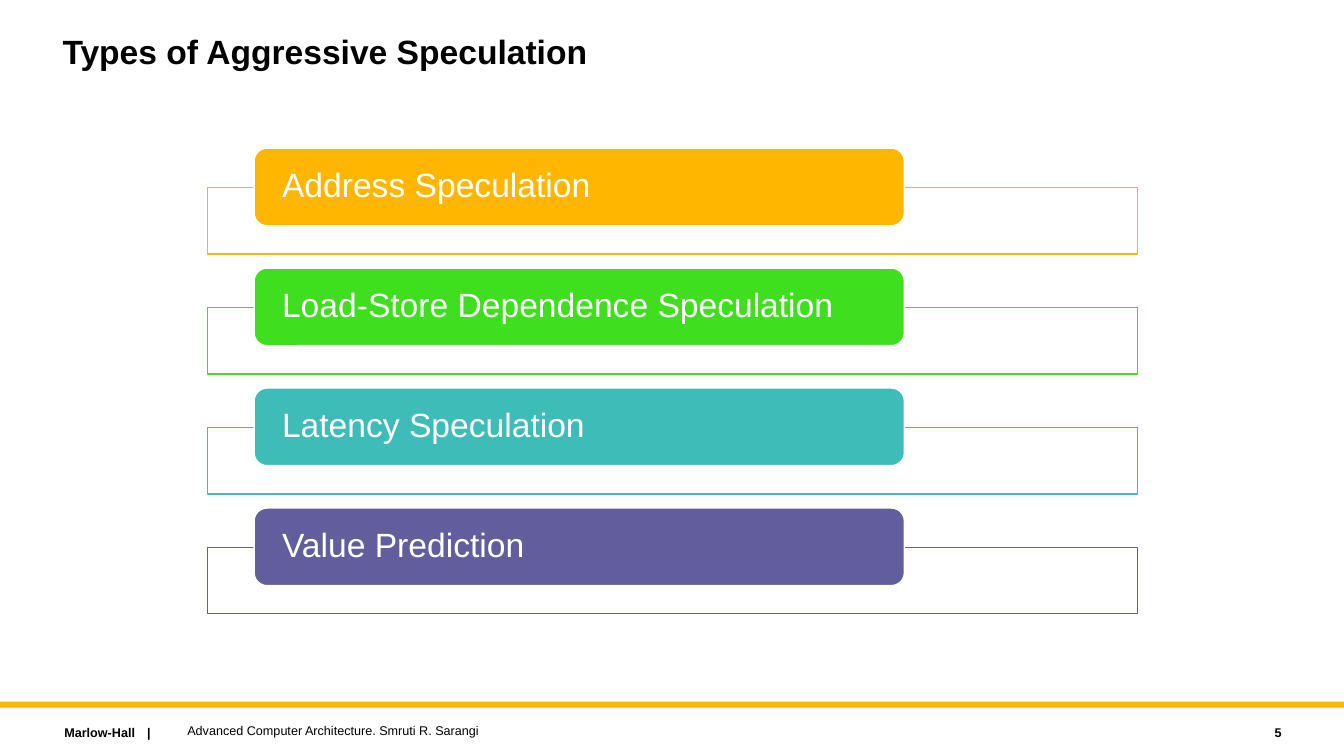
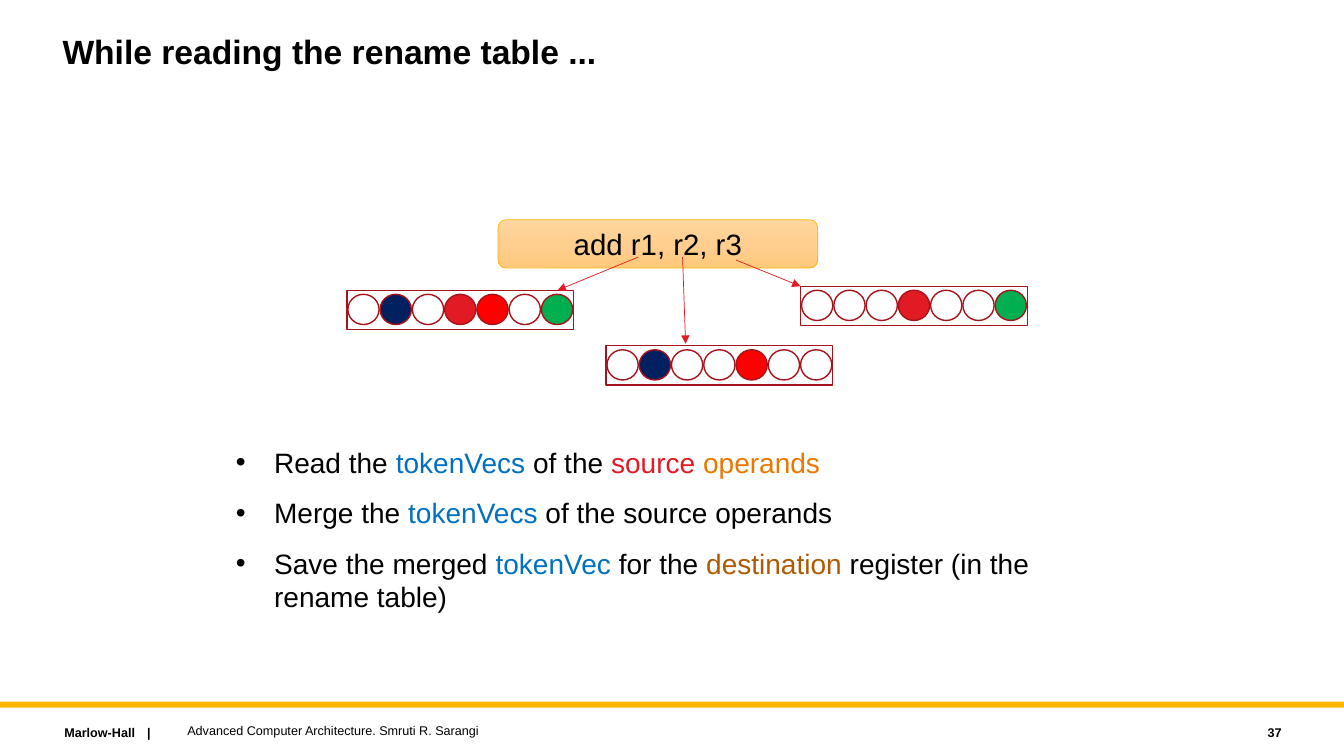
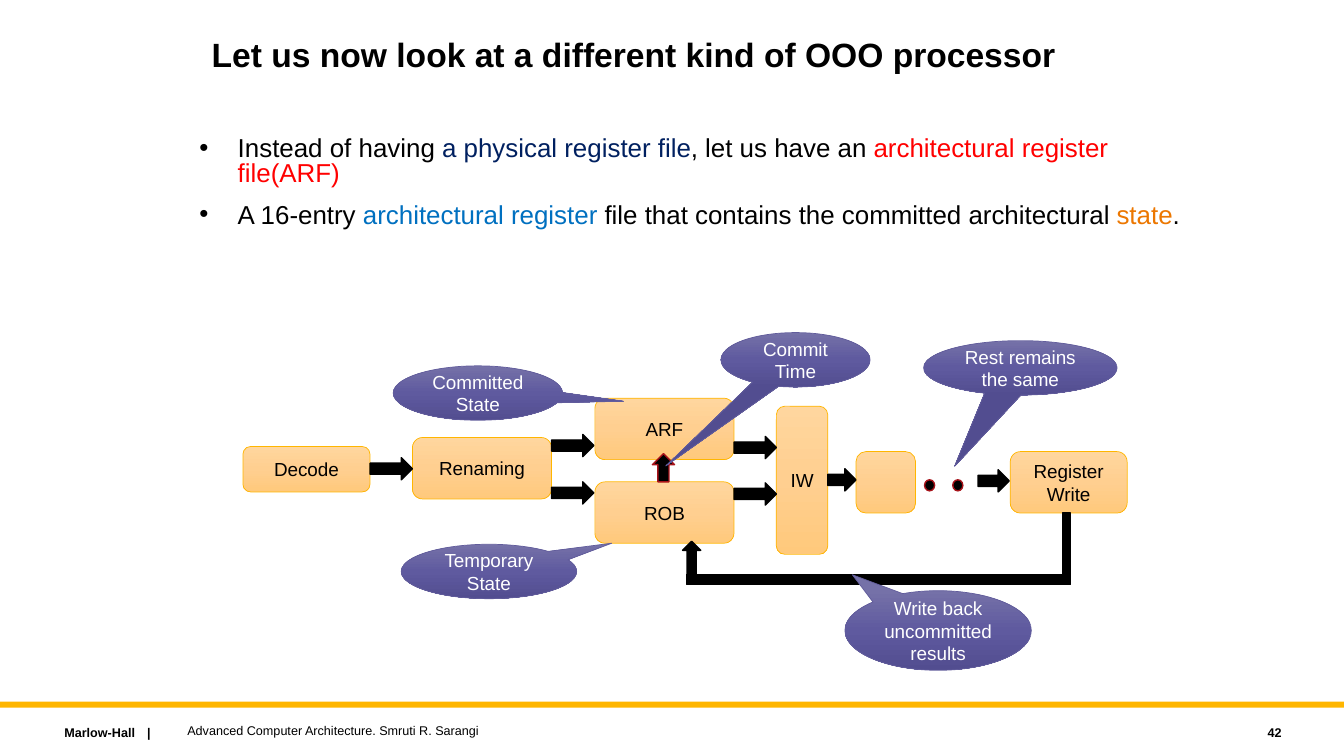
from copy import deepcopy
from dataclasses import dataclass

from lxml.etree import SubElement
from pptx import Presentation
from pptx.dml.color import RGBColor
from pptx.enum.shapes import MSO_CONNECTOR as Connector, MSO_SHAPE as Preset
from pptx.enum.text import MSO_ANCHOR as Anchor, MSO_AUTO_SIZE as AutoSize, PP_ALIGN as Align
from pptx.oxml.ns import qn
from pptx.util import Inches, Pt


@dataclass(frozen=True)
class Theme:
    font: str = "Arial"
    black: str = "000000"
    white: str = "FFFFFF"
    gold: str = "FFB600"
    lime: str = "3FDE1F"
    teal: str = "3EBCB7"
    violet: str = "625D9C"
    crimson: str = "E21A23"
    maroon: str = "A7131A"
    red: str = "FF0000"
    navy: str = "002060"
    blue: str = "0070C0"
    green: str = "00B050"
    orange: str = "EC7700"
    brown: str = "B15900"
    stage_shades: tuple = ("FFD69E", "FFCF90", "FFC97C")
    callout_shades: tuple = ("7571A8", "5F5A9F", "524D90")
    title_size: float = 24
    instruction_size: float = 21
    diagram_size: float = 13.5
    footer_size: float = 9


THEME = Theme()


def rgb(value):
    return RGBColor.from_string(value)


def inches(*lengths):
    return [Inches(length) for length in lengths]


def style_font(font, size, color, bold=False):
    font.name, font.size, font.bold = THEME.font, Pt(size), bold
    font.color.rgb = rgb(color)


def write(frame, text, size, color, bold=False, align=Align.LEFT, spacing=1.0):
    frame.text = text
    frame.word_wrap = True
    frame.vertical_anchor = Anchor.MIDDLE
    for paragraph in frame.paragraphs:
        paragraph.alignment = align
        paragraph.line_spacing = spacing
        for run in paragraph.runs:
            style_font(run.font, size, color, bold)


def add_figure(slide, preset, box, fill=None, line=None, width=1):
    figure = slide.shapes.add_shape(preset, *inches(*box))
    figure.shadow.inherit = False
    if fill:
        figure.fill.solid()
        figure.fill.fore_color.rgb = rgb(fill)
    else:
        figure.fill.background()
    if line:
        figure.line.color.rgb = rgb(line)
        figure.line.width = Pt(width)
    else:
        figure.line.fill.background()
    return figure


def shade(figure, colors):
    figure.fill.gradient()
    figure.fill.gradient_angle = 270
    stop_list = figure.element.spPr.find(".//" + qn("a:gsLst"))
    stop_list.insert(1, deepcopy(stop_list[0]))
    for index, (stop, color) in enumerate(zip(figure.fill.gradient_stops, colors)):
        stop.position = index / 2
        stop.color.rgb = rgb(color)


def add_stage(slide, box, text="", size=THEME.diagram_size):
    stage = add_figure(slide, Preset.ROUNDED_RECTANGLE, box, line=THEME.gold, width=0.5)
    shade(stage, THEME.stage_shades)
    if text:
        write(stage.text_frame, text, size, THEME.black, align=Align.CENTER)


def add_callout(slide, box, tip, text):
    callout = add_figure(slide, Preset.OVAL_CALLOUT, box, line=THEME.violet, width=0.5)
    callout.adjustments[0], callout.adjustments[1] = tip
    shade(callout, THEME.callout_shades)
    write(callout.text_frame, text, THEME.diagram_size, THEME.white, align=Align.CENTER)


def add_label(slide, box, text, bold=False, align=Align.LEFT):
    label = slide.shapes.add_textbox(*inches(*box))
    write(label.text_frame, text, THEME.footer_size, THEME.black, bold, align)
    return label


def add_arrow(slide, start, end):
    arrow = slide.shapes.add_connector(Connector.STRAIGHT, *inches(*start, *end))
    arrow.line.color.rgb = rgb(THEME.crimson)
    arrow.line.width = Pt(0.5)
    properties = arrow.element.spPr
    SubElement(properties.find(qn("a:ln")), qn("a:tailEnd"), type="triangle")
    SubElement(properties, qn("a:effectLst"))


def add_bullets(slide, box, items, size, spacing=1.0):
    frame = slide.shapes.add_textbox(*inches(*box)).text_frame
    frame.word_wrap = True
    for index, pieces in enumerate(items):
        paragraph = frame.add_paragraph() if index else frame.paragraphs[0]
        properties = paragraph._p.get_or_add_pPr()
        properties.set("marL", str(Inches(0.38)))
        properties.set("indent", str(Inches(-0.38)))
        SubElement(properties, qn("a:buFont"), typeface=THEME.font)
        SubElement(properties, qn("a:buChar"), char="•")
        paragraph.line_spacing = spacing
        if index:
            paragraph.space_before = Pt(12)
        for text, color in pieces:
            run = paragraph.add_run()
            run.text = text
            style_font(run.font, size, color)


def add_token_vector(slide, left, top, tokens):
    add_figure(slide, Preset.RECTANGLE, (left, top, 2.25, 0.39), line=THEME.maroon)
    for index in range(7):
        box = (left + 0.01 + 0.32 * index, top + 0.04, 0.31, 0.3)
        add_figure(slide, Preset.OVAL, box, tokens.get(index), THEME.maroon)


def brand_layout(layout, slide):
    for placeholder in list(layout.placeholders):
        if placeholder.placeholder_format.idx:
            layout.shapes.element.remove(placeholder.element)
    band = add_figure(slide, Preset.RECTANGLE, (0, 6.96, 13.33, 0.06), THEME.gold)
    publisher = add_label(slide, (0.54, 7.14, 2.27, 0.25), "Marlow-Hall\t|", bold=True)
    properties = publisher.text_frame.paragraphs[0]._p.get_or_add_pPr()
    tabs = SubElement(properties, qn("a:tabLst"))
    SubElement(tabs, qn("a:tab"), pos=str(Inches(0.82)), algn="l")
    for part in (band, publisher):
        layout.shapes.element.append(part.element)


def start_slide(slide, title, number, box=(0.52, 0.3, 10, 0.9)):
    heading = slide.shapes.title
    heading.left, heading.top, heading.width, heading.height = inches(*box)
    write(heading.text_frame, title, THEME.title_size, THEME.black, bold=True, spacing=0.9)
    heading.text_frame.vertical_anchor = Anchor.TOP
    heading.text_frame.auto_size = AutoSize.NONE
    add_label(slide, (1.76, 7.12, 8, 0.25), "Advanced Computer Architecture. Smruti R. Sarangi")
    add_label(slide, (11.41, 7.14, 1.4, 0.25), str(number), bold=True, align=Align.RIGHT)


def build_speculation_types(slide):
    start_slide(slide, "Types of Aggressive Speculation", 5)
    kinds = [
        ("Address Speculation", THEME.gold),
        ("Load-Store Dependence Speculation", THEME.lime),
        ("Latency Speculation", THEME.teal),
        ("Value Prediction", THEME.violet),
    ]
    for index, (kind, color) in enumerate(kinds):
        top = 1.47 + 1.19 * index
        add_figure(slide, Preset.RECTANGLE, (2.06, top + 0.39, 9.22, 0.66), THEME.white, color)
        banner = add_figure(slide, Preset.ROUNDED_RECTANGLE, (2.52, top, 6.45, 0.77), color, THEME.white)
        write(banner.text_frame, kind, THEME.title_size, THEME.white, spacing=0.9)
        banner.text_frame.margin_left = banner.text_frame.margin_right = Inches(0.24)


def build_rename_table(slide):
    start_slide(slide, "While reading the rename table ...", 37)
    black, blue = THEME.black, THEME.blue
    add_bullets(slide, (2.24, 4.37, 8.62, 1.75), [
        [("Read the ", black), ("tokenVecs ", blue), ("of the ", black),
         ("source ", THEME.crimson), ("operands", THEME.orange)],
        [("Merge the ", black), ("tokenVecs", blue), (" of the source operands", black)],
        [("Save the merged ", black), ("tokenVec ", blue), ("for the ", black),
         ("destination", THEME.brown), (" register (in the rename table)", black)],
    ], 20)
    add_stage(slide, (4.94, 2.18, 3.17, 0.48), "add r1, r2, r3", THEME.instruction_size)
    first = {1: THEME.navy, 4: THEME.red}
    second = {3: THEME.crimson, 6: THEME.green}
    add_token_vector(slide, 3.44, 2.88, first | second)
    add_token_vector(slide, 6.01, 3.43, first)
    add_token_vector(slide, 7.94, 2.84, second)
    add_arrow(slide, (6.33, 2.55), (5.53, 2.88))
    add_arrow(slide, (6.77, 2.55), (6.8, 3.41))
    add_arrow(slide, (7.3, 2.58), (7.94, 2.84))


def build_ooo_processor(slide):
    start_slide(slide, "Let us now look at a different kind of OOO processor", 42, (2, 0.33, 8.62, 1.09))
    black = THEME.black
    add_bullets(slide, (1.88, 1.32, 9.96, 1.37), [
        [("Instead of having ", black), ("a physical register file", THEME.navy),
         (", let us have an ", black), ("architectural register file(ARF)", THEME.red)],
        [("A 16-entry ", black), ("architectural register ", THEME.blue),
         ("file that contains the committed architectural ", black),
         ("state", THEME.orange), (".", black)],
    ], 18.5, 0.8)

    for text, *box in [
        ("Decode", 2.41, 4.43, 1.26, 0.45),
        ("Renaming", 4.09, 4.34, 1.38, 0.61),
        ("ARF", 5.9, 3.95, 1.38, 0.61),
        ("ROB", 5.9, 4.78, 1.38, 0.61),
        ("IW", 7.7, 4.03, 0.51, 1.47),
        ("", 8.49, 4.48, 0.59, 0.61),
        ("Register\nWrite", 10.02, 4.48, 1.16, 0.61),
    ]:
        add_stage(slide, box, text)

    for left, top, width in [
        (3.67, 4.54, 0.42), (5.47, 4.31, 0.42), (5.47, 4.78, 0.42), (7.28, 4.33, 0.42),
        (7.28, 4.79, 0.42), (8.21, 4.65, 0.28), (9.7, 4.66, 0.31),
    ]:
        add_figure(slide, Preset.RIGHT_ARROW, (left, top, width, 0.22), black, black)

    for left in (9.17, 9.45):
        add_figure(slide, Preset.OVAL, (left, 4.76, 0.1, 0.11), black, THEME.maroon)
    add_figure(slide, Preset.UP_ARROW, (6.47, 4.5, 0.22, 0.28), black, THEME.maroon)

    for preset, *box in [
        (Preset.RECTANGLE, 6.81, 5.7, 3.81, 0.1),
        (Preset.UP_ARROW, 6.77, 5.37, 0.18, 0.33),
        (Preset.RECTANGLE, 10.54, 5.09, 0.08, 0.61),
    ]:
        add_figure(slide, preset, box, black, black)

    for text, tip, *box in [
        ("Committed State", (0.86, 0.15), 3.9, 3.63, 1.68, 0.54),
        ("Temporary State", (0.7, -0.52), 3.98, 5.4, 1.74, 0.54),
        ("Commit Time", (-0.87, 1.95), 7.15, 3.3, 1.48, 0.54),
        ("Rest remains the same", (-0.34, 1.81), 9.16, 3.38, 1.92, 0.54),
        ("Write back uncommitted results", (-0.46, -0.7), 8.38, 5.86, 1.85, 0.79),
    ]:
        add_callout(slide, box, tip, text)


def main():
    deck = Presentation()
    deck.slide_width, deck.slide_height = inches(13.33, 7.5)
    layout = deck.slide_layouts[5]
    builders = (build_speculation_types, build_rename_table, build_ooo_processor)
    for index, build in enumerate(builders):
        slide = deck.slides.add_slide(layout)
        if index == 0:
            brand_layout(layout, slide)
        build(slide)
    deck.save("out.pptx")


if __name__ == "__main__":
    main()
